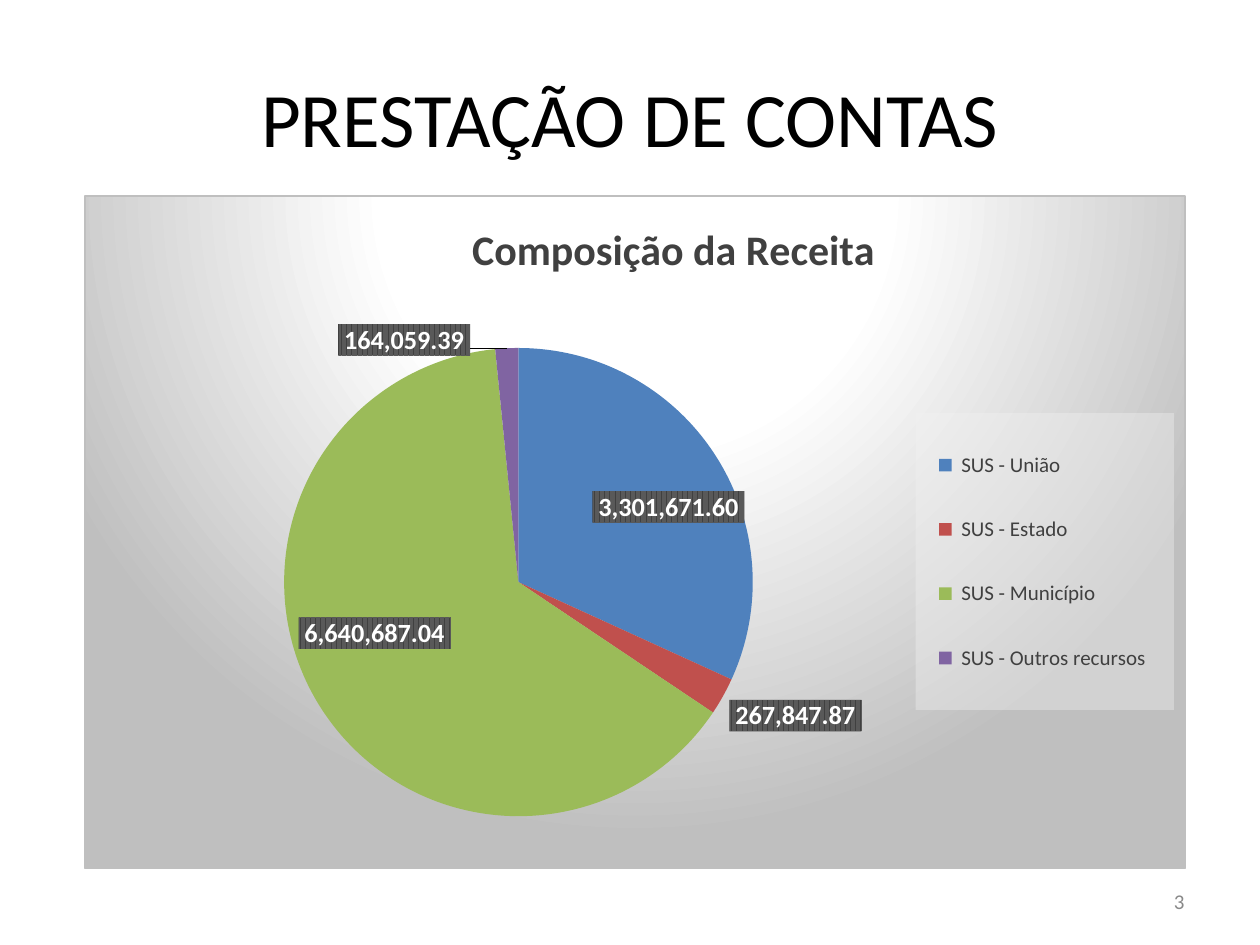
from dataclasses import dataclass

from lxml import etree
from pptx import Presentation
from pptx.chart.data import CategoryChartData
from pptx.dml.color import RGBColor
from pptx.enum.chart import XL_CHART_TYPE, XL_LABEL_POSITION, XL_LEGEND_POSITION
from pptx.enum.text import MSO_ANCHOR, PP_ALIGN
from pptx.oxml import parse_xml
from pptx.oxml.ns import nsdecls, qn
from pptx.util import Inches, Pt

PIE = XL_CHART_TYPE.PIE
INSIDE, OUTSIDE = XL_LABEL_POSITION.INSIDE_END, XL_LABEL_POSITION.OUTSIDE_END
LEGEND_RIGHT = XL_LEGEND_POSITION.RIGHT
CENTER, RIGHT = PP_ALIGN.CENTER, PP_ALIGN.RIGHT
MIDDLE = MSO_ANCHOR.MIDDLE


@dataclass(frozen=True)
class Theme:
    font: str = "Calibri"
    background: str = "FFFFFF"
    title: str = "000000"
    muted: str = "898989"
    chart_text: str = "404040"
    label_text: str = "FFFFFF"
    label_stripe: str = "595959"
    legend: str = "F2F2F2"
    edge: str = "BFBFBF"
    title_size: int = 44
    chart_title_size: int = 24
    label_size: int = 15
    small_size: int = 12
    chart_size: int = 10


THEME = Theme()
SLIDE_WIDTH, SLIDE_HEIGHT = Inches(10), Inches(7.5)
MONEY = '_(* #,##0.00_);_(* \\(#,##0.00\\);_(* "-"??_);_(@_)'
REVENUE = [
    (" SUS - União ", 3301671.60, "4F81BD", INSIDE, (3.2, 4.7)),
    (" SUS - Estado ", 267847.87, "C0504D", OUTSIDE, None),
    (" SUS - Município ", 6640687.04, "9BBB59", INSIDE, (-2.3, -7.4)),
    (" SUS - Outros recursos ", 164059.39, "8064A2", OUTSIDE, (-9.3, 2.2)),
]
PANEL_FILL = f"""<a:gradFill>
  <a:gsLst>
    <a:gs pos="0"><a:srgbClr val="{THEME.background}"/></a:gs>
    <a:gs pos="39000"><a:srgbClr val="{THEME.background}"/></a:gs>
    <a:gs pos="100000"><a:srgbClr val="{THEME.edge}"/></a:gs>
  </a:gsLst>
  <a:path path="circle"><a:fillToRect l="50000" t="-80000" r="50000" b="180000"/></a:path>
</a:gradFill>
<a:ln w="9525"><a:solidFill><a:srgbClr val="{THEME.edge}"/></a:solidFill></a:ln>"""
LEGEND_FILL = f"""<a:solidFill>
  <a:srgbClr val="{THEME.legend}"><a:alpha val="39000"/></a:srgbClr>
</a:solidFill>"""
LABEL_FILL = f"""<a:pattFill prst="dkVert">
  <a:fgClr><a:srgbClr val="{THEME.label_stripe}"/></a:fgClr>
  <a:bgClr><a:srgbClr val="{THEME.chart_text}"/></a:bgClr>
</a:pattFill>"""


def box(left, top, width, height):
    return (round(SLIDE_WIDTH * left / 100), round(SLIDE_HEIGHT * top / 100),
            round(SLIDE_WIDTH * width / 100), round(SLIDE_HEIGHT * height / 100))


def style_font(font, size, color, bold=False):
    font.name, font.size, font.bold = THEME.font, Pt(size), bold
    font.color.rgb = RGBColor.from_string(color)


def paint(fill, color):
    fill.solid()
    fill.fore_color.rgb = RGBColor.from_string(color)


def add_text(slide, place, words, size, color, align):
    holder = slide.shapes.add_textbox(*place)
    frame = holder.text_frame
    frame.word_wrap = True
    frame.vertical_anchor = MIDDLE
    line = frame.paragraphs[0]
    line.text, line.alignment = words, align
    style_font(line.font, size, color)
    return holder


def set_layout(part, index, modes=(), **percents):
    for previous in part.findall(qn("c:layout")):
        part.remove(previous)
    layout = etree.Element(qn("c:layout"))
    manual = etree.SubElement(layout, qn("c:manualLayout"))
    for mode, value in modes:
        etree.SubElement(manual, qn(f"c:{mode}"), val=value)
    for side, percent in percents.items():
        etree.SubElement(manual, qn(f"c:{side}"), val=f"{percent / 100:.4f}")
    part.insert(index, layout)


def set_fill(part, fill):
    part.find(qn("c:txPr")).addprevious(
        parse_xml(f'<c:spPr {nsdecls("c", "a")}>{fill}</c:spPr>'))


def style_slice(point, color, position):
    paint(point.format.fill, color)
    style_font(point.data_label.font, THEME.label_size, THEME.label_text, True)
    point.data_label.position = position


def style_label(label, shift):
    label.find(qn("c:txPr")).addprevious(
        etree.Element(qn("c:numFmt"), formatCode=MONEY, sourceLinked="0"))
    set_fill(label, LABEL_FILL)
    if shift:
        set_layout(label, 1, x=shift[0], y=shift[1])


def arrange_chart(space):
    edges = [("xMode", "edge"), ("yMode", "edge")]
    body = space.find(qn("c:chart"))
    legend = body.find(qn("c:legend"))
    set_fill(space, PANEL_FILL)
    set_fill(legend, LEGEND_FILL)
    set_layout(body.find(qn("c:title")), 1, edges, x=34.5, y=2.6)
    set_layout(legend, 1, edges, x=75.5, y=32.3, w=23.5, h=44.1)
    set_layout(body.find(qn("c:plotArea")), 0, [("layoutTarget", "inner"), *edges],
               x=18.1, y=22.6, w=42.6, h=69.6)


def add_revenue_chart(slide, place):
    revenue = CategoryChartData(number_format=MONEY)
    revenue.categories = [row[0] for row in REVENUE]
    revenue.add_series("Series 1", [row[1] for row in REVENUE])
    chart = slide.shapes.add_chart(PIE, *place, revenue).chart
    style_font(chart.font, THEME.chart_size, THEME.title)

    chart.has_title = True
    heading = chart.chart_title.text_frame.paragraphs[0]
    heading.text = "Composição da Receita"
    style_font(heading.font, THEME.chart_title_size, THEME.chart_text, True)

    chart.has_legend = True
    chart.legend.position = LEGEND_RIGHT
    chart.legend.include_in_layout = False
    style_font(chart.legend.font, THEME.small_size, THEME.chart_text)

    plot = chart.plots[0]
    plot.vary_by_categories = True
    for index, (_, _, color, position, _) in enumerate(REVENUE):
        style_slice(plot.series[0].points[index], color, position)
    for label, row in zip(chart.element.iter(qn("c:dLbl")), REVENUE):
        style_label(label, row[4])
    arrange_chart(chart.element)


def main():
    deck = Presentation()
    deck.slide_width, deck.slide_height = SLIDE_WIDTH, SLIDE_HEIGHT
    slide = deck.slides.add_slide(deck.slide_layouts[6])
    title = add_text(slide, box(5, 4, 90, 16.67), "PRESTAÇÃO DE CONTAS",
                     THEME.title_size, THEME.title, CENTER)
    paint(title.fill, THEME.background)
    add_revenue_chart(slide, box(6.7, 20.67, 87.4, 71.33))
    add_text(slide, box(71.7, 92.67, 23.3, 5.33), "3",
             THEME.small_size, THEME.muted, RIGHT)
    deck.save("out.pptx")


if __name__ == "__main__":
    main()
